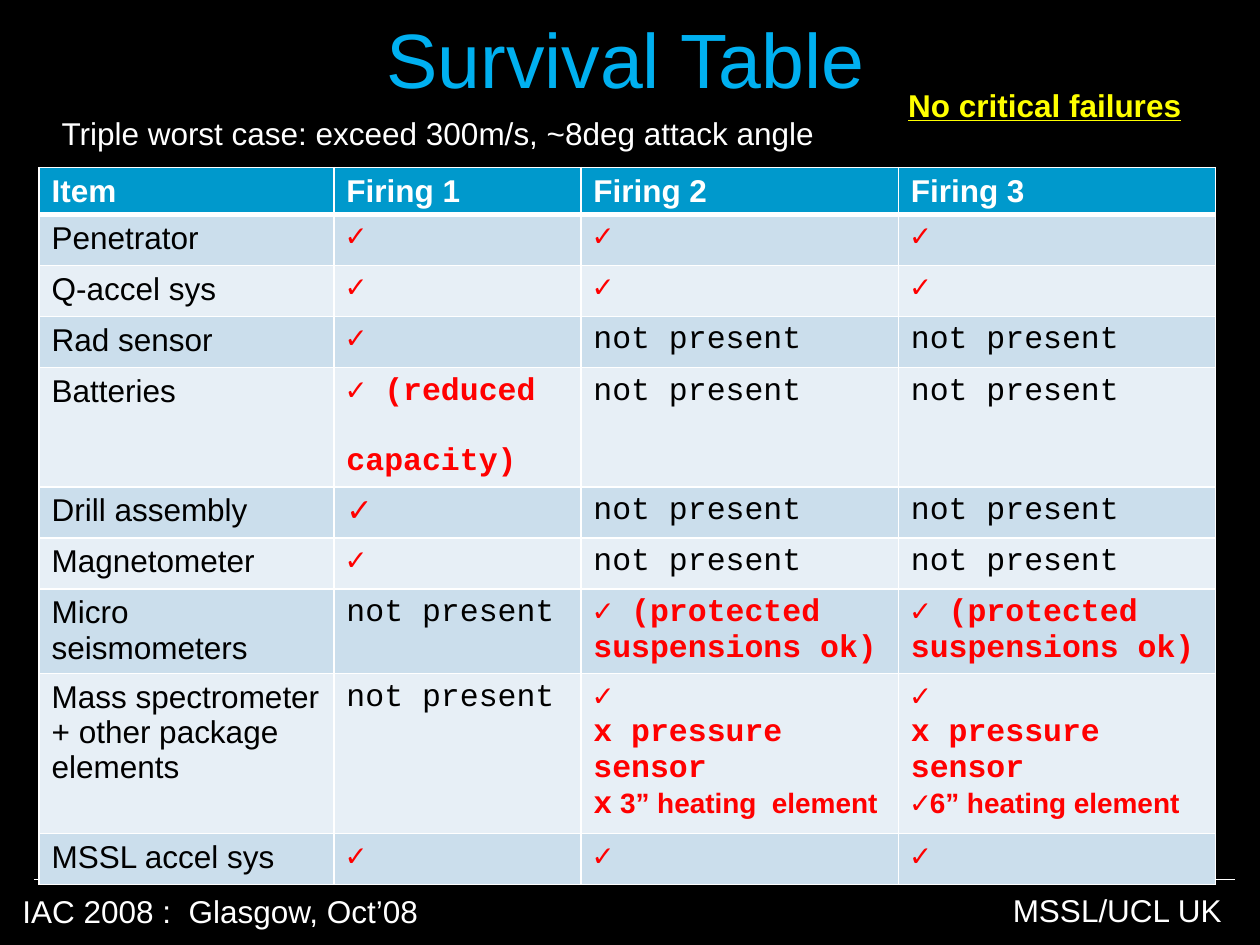
import pptx
import pptx.util
import pptx.dml.color
import pptx.enum.shapes
import pptx.enum.text
import pptx.oxml
import pptx.oxml.ns

Inches, Pt = pptx.util.Inches, pptx.util.Pt
RGB = pptx.dml.color.RGBColor.from_string
NS = pptx.oxml.ns.nsdecls("a")

THEME = {
    "black": RGB("000000"), "white": RGB("FFFFFF"), "title": RGB("00B0F0"),
    "yellow": RGB("FFFF00"), "red": RGB("FF0000"), "header": RGB("0099CC"),
    "bands": (RGB("CBDEEC"), RGB("E7EFF6")),
    "sans": "Arial", "mono": "Courier New",
    "title_size": Pt(44), "body_size": Pt(18), "small_size": Pt(16),
}


def style(font, color, name="sans", size="body_size", bold=False):
    font.name = THEME[name]
    font.size = THEME[size]
    font.bold = bold
    font.color.rgb = THEME[color]


def add_text(s, text, x, y, w, h, color="white", size="body_size", bold=False):
    sp = s.shapes.add_textbox(Inches(x), Inches(y), Inches(w), Inches(h))
    p = sp.text_frame.paragraphs[0]
    p.text = text
    style(p.font, color, size=size, bold=bold)
    return sp.text_frame


prs = pptx.Presentation()
prs.slide_width, prs.slide_height = Inches(10), Inches(7.5)
s = prs.slides.add_slide(prs.slide_layouts[6])
s.background.fill.solid()
s.background.fill.fore_color.rgb = THEME["black"]

# Footer rule and captions
rule = s.shapes.add_connector(pptx.enum.shapes.MSO_CONNECTOR.STRAIGHT,
                              Inches(0.27), Inches(6.98), Inches(9.8), Inches(6.98))
rule.line.color.rgb = THEME["white"]
rule.line.width = Pt(0.75)
rule._element.spPr.append(pptx.oxml.parse_xml(f"<a:effectLst {NS}/>"))
add_text(s, "IAC 2008 :  Glasgow, Oct’08", 0.08, 7.03, 3.44, 0.4)
add_text(s, "MSSL/UCL UK", 7.94, 7.02, 1.87, 0.4)

# Title
tf = add_text(s, "Survival Table", 0.31, 0, 9.31, 0.92, "title", "title_size")
tf.word_wrap = True
tf.vertical_anchor = pptx.enum.text.MSO_ANCHOR.MIDDLE
tf.paragraphs[0].alignment = pptx.enum.text.PP_ALIGN.CENTER

# Survival table: a line break starts a paragraph, a bar starts small sans text
OK, NONE = "✓", "not present"
PROTECTED = "✓ (protected suspensions ok)"
rows = [
    ("Item", "Firing 1", "Firing 2", "Firing 3"),
    ("Penetrator", OK, OK, OK),
    ("Q-accel sys", OK, OK, OK),
    ("Rad sensor", OK, NONE, NONE),
    ("Batteries", "✓ (reduced\ncapacity)", NONE, NONE),
    ("Drill assembly", OK, NONE, NONE),
    ("Magnetometer", OK, NONE, NONE),
    ("Micro seismometers", NONE, PROTECTED, PROTECTED),
    ("Mass spectrometer\n+ other package elements", NONE,
     "✓\nx pressure sensor\nx| 3” heating  element",
     "✓\nx pressure sensor\n✓|6” heating element"),
    ("MSSL accel sys", OK, OK, OK),
]
widths = (2.34, 1.96, 2.52, 2.52)
header_height, body_height = Inches(0.37), Inches(3.65)
table = s.shapes.add_table(len(rows), len(widths), Inches(0.31), Inches(1.33),
                           Inches(sum(widths)), header_height + body_height).table
for column, width in zip(table.columns, widths):
    column.width = Inches(width)
for i, row in enumerate(rows):
    table.rows[i].height = body_height // (len(rows) - 1) if i else header_height
    for j, text in enumerate(row):
        cell = table.cell(i, j)
        cell.margin_bottom = Inches(0.02)
        cell.fill.solid()
        cell.fill.fore_color.rgb = THEME["bands"][(i - 1) % 2] if i else THEME["header"]

        # White borders, heavier between header and body
        for k, side in enumerate("LRTB"):
            heavy = (i, side) in ((0, "B"), (1, "T"))
            cell._tc.get_or_add_tcPr().insert(k, pptx.oxml.parse_xml(
                f'<a:ln{side} {NS} w="{Pt(3 if heavy else 1)}"><a:solidFill>'
                f'<a:srgbClr val="{THEME["white"]}"/></a:solidFill></a:ln{side}>'))

        if i == 0:
            look = ("white", "sans", "body_size", True)
        elif j == 0:
            look = ("black", "sans")
        elif text == NONE:
            look = ("black", "mono")
        else:
            drill = row[0] == "Drill assembly"
            look = ("red", "sans" if drill else "mono", "body_size", True)
        for k, line in enumerate(text.split("\n")):
            p = cell.text_frame.paragraphs[0] if k == 0 else cell.text_frame.add_paragraph()
            main, _, small = line.partition("|")
            r = p.add_run()
            r.text = main
            if small:
                style(r.font, *look)
                r = p.add_run()
                r.text = small
                style(r.font, "red", size="small_size", bold=True)
            else:
                style(p.font, *look)
            if line == "capacity)":
                p.space_before = Pt(20)

# Notes above the table
add_text(s, "Triple worst case: exceed 300m/s, ~8deg attack angle", 0.39, 0.86, 6.33, 0.4)
tf = add_text(s, "No critical failures", 7.11, 0.63, 2.46, 0.4, "yellow", bold=True)
tf.paragraphs[0].font.underline = True

prs.save("out.pptx")
